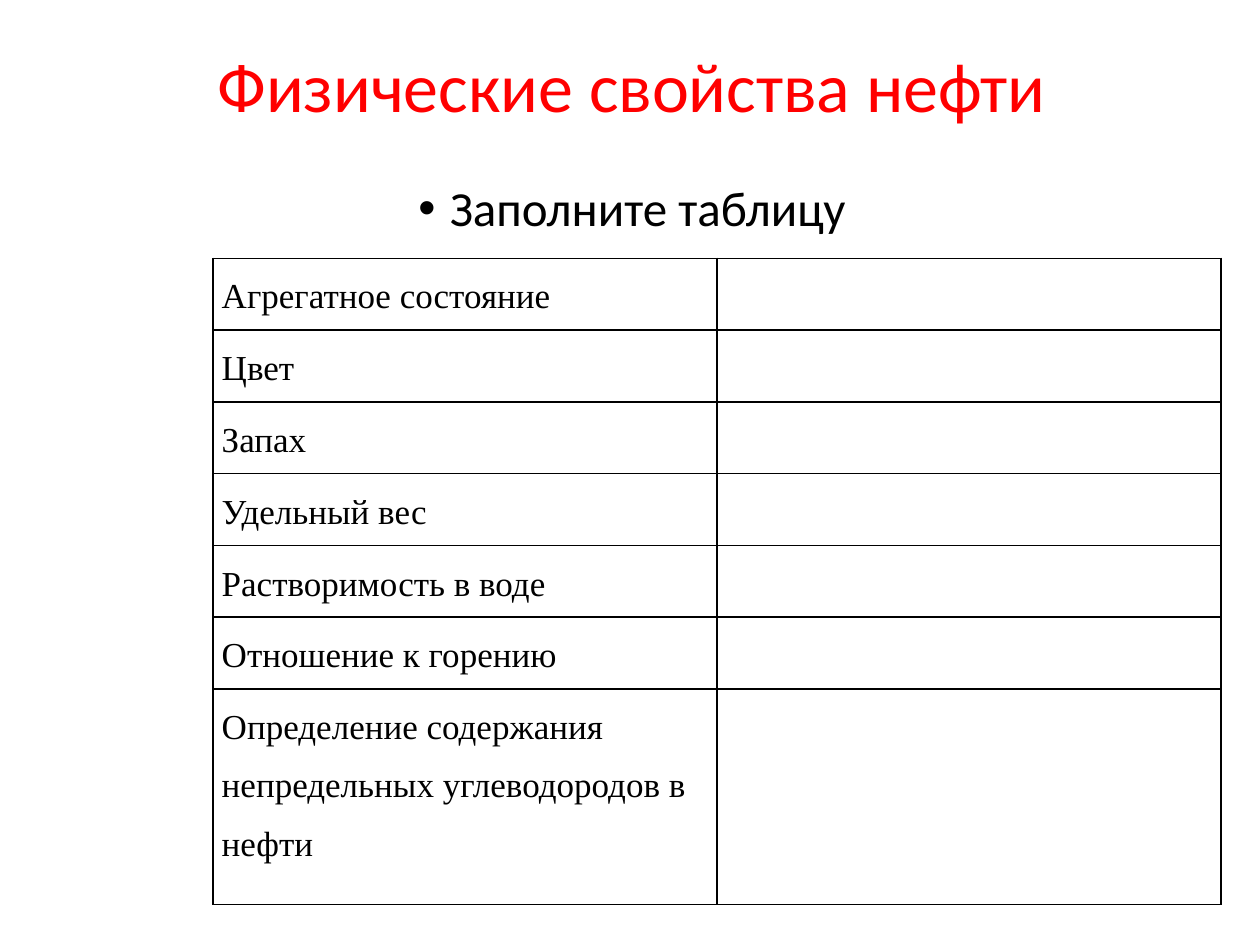
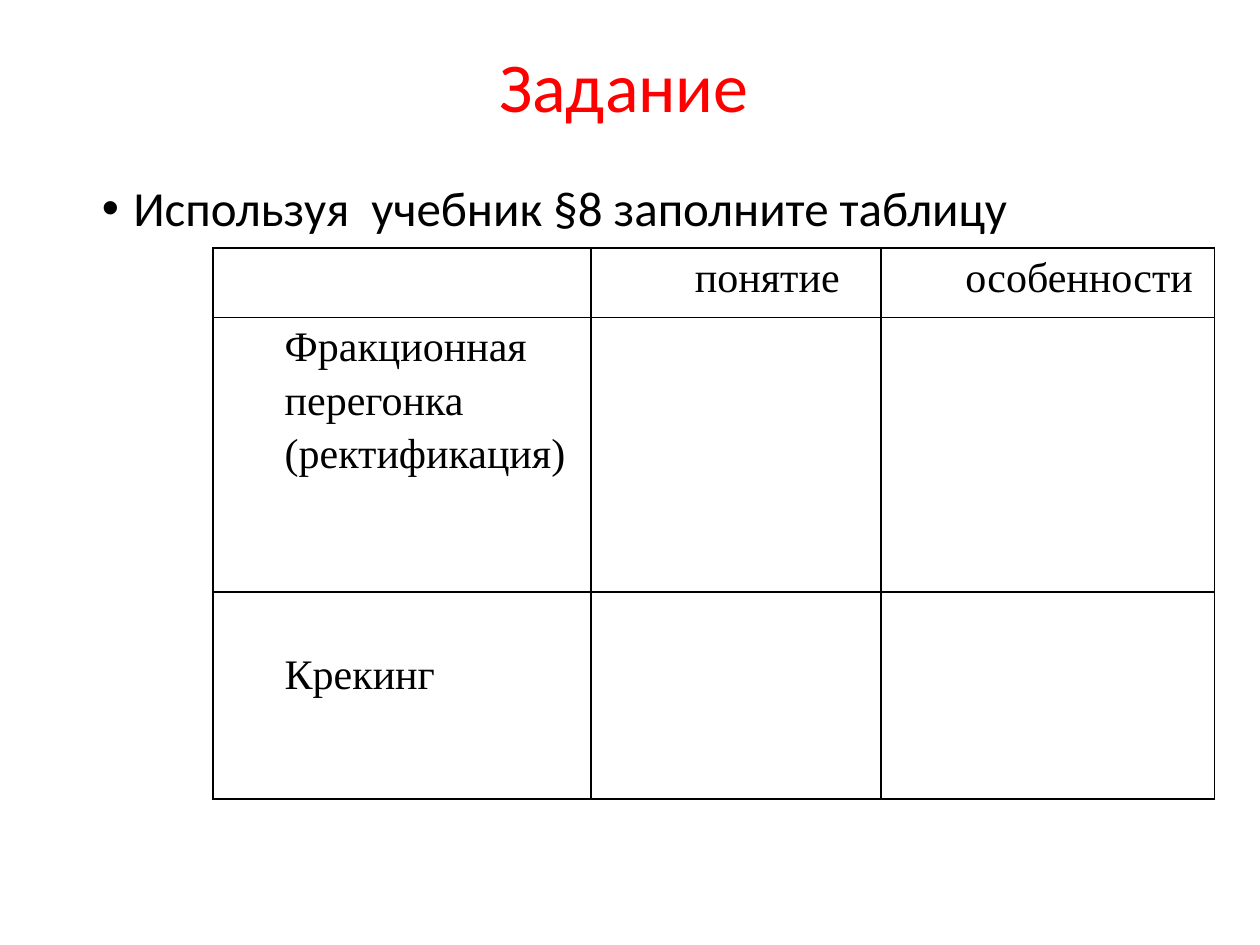
from lxml import etree
from pptx import Presentation, util as u
from pptx.dml.color import RGBColor
from pptx.enum import text as t
from pptx.oxml import ns

RED = RGBColor(0xFF, 0x00, 0x00)
BLACK = RGBColor(0x00, 0x00, 0x00)
SANS, SERIF = "Calibri", "Times New Roman"
COLS, ROWS = 100, 75
MID = t.PP_ALIGN.CENTER
LEFT = t.PP_ALIGN.LEFT


def write(frame, words, size=28, font=SANS, color=BLACK, align=LEFT,
          line=0.9, indent=0, bullet=None):
    """Fill a text frame, one paragraph for each line of words."""
    frame.word_wrap = True
    for i, part in enumerate(words.split("\n")):
        para = frame.add_paragraph() if i else frame.paragraphs[0]
        para.alignment, para.line_spacing = align, line
        para.space_before = u.Pt(0)
        props = para._p.get_or_add_pPr()
        props.set("marL", str(u.Inches(indent)))
        props.set("indent", str(u.Inches(-indent if bullet else 0)))
        if bullet:
            etree.SubElement(props, ns.qn("a:buFont"), typeface="Arial")
            etree.SubElement(props, ns.qn("a:buChar"), char=bullet)
        run = para.add_run()
        run.text = part
        run.font.size, run.font.name = u.Pt(size), font
        run.font.color.rgb = color


def border(cell, width=1):
    props = cell._tc.get_or_add_tcPr()
    for side in ("lnL", "lnR", "lnT", "lnB"):
        edge = etree.SubElement(props, ns.qn("a:" + side), w=str(u.Pt(width)))
        fill = etree.SubElement(edge, ns.qn("a:solidFill"))
        etree.SubElement(fill, ns.qn("a:srgbClr"), val=str(BLACK))


class Deck:
    """Hold the shared style and the current slide."""

    def __init__(self):
        self.prs = Presentation()
        self.prs.slide_width, self.prs.slide_height = u.Inches(10), u.Inches(7.5)
        self.slide = None

    def x(self, cols):
        return round(self.prs.slide_width * cols / COLS)

    def y(self, rows):
        return round(self.prs.slide_height * rows / ROWS)

    def box(self, left, top, wide, high):
        return self.x(left), self.y(top), self.x(wide), self.y(high)

    def title(self, words):
        """Start a slide with a red title."""
        self.slide = self.prs.slides.add_slide(self.prs.slide_layouts[5])
        head = self.slide.shapes.title
        head.left, head.top, head.width, head.height = self.box(7.1, 1.7, 86.1, 10.9)
        head.text_frame.vertical_anchor = t.MSO_ANCHOR.MIDDLE
        write(head.text_frame, words, size=40, color=RED, align=MID)

    def task(self, words, align=LEFT):
        area = self.slide.shapes.add_textbox(*self.box(7.1, 14.1, 86.1, 53.5))
        write(area.text_frame, words, align=align, indent=0.25, bullet="•")

    def table(self, top, wides, highs, cells, drops=(), **style):
        """Draw a ruled table; drops maps a cell to its top margin in rows."""
        drops = dict(drops)
        place = self.box(16.9, top, sum(wides), sum(highs))
        grid = self.slide.shapes.add_table(len(highs), len(wides), *place).table
        grid.first_row = grid.horz_banding = False
        for col, wide in zip(grid.columns, wides):
            col.width = self.x(wide)
        for row, high in zip(grid.rows, highs):
            row.height = self.y(high)
        for r, line in enumerate(cells):
            for c, words in enumerate(line):
                cell = grid.cell(r, c)
                border(cell)
                cell.fill.background()
                cell.margin_left = cell.margin_right = self.x(0.7)
                cell.margin_top = self.y(drops.get((r, c), 0))
                cell.margin_bottom = 0
                if words:
                    align = MID if c else LEFT
                    write(cell.text_frame, words, font=SERIF, align=align, **style)


def main():
    deck = Deck()

    deck.title("Физические свойства нефти")
    deck.task("Заполните таблицу", align=MID)
    traits = ["Агрегатное состояние", "Цвет", "Запах", "Удельный вес",
              "Растворимость в воде", "Отношение к горению",
              "Определение содержания непредельных углеводородов в нефти"]
    deck.table(20.5, [40, 40], [5.7] * 6 + [17.1],
               [(trait, "") for trait in traits], size=20, line=1.5)

    deck.title("Задание ")
    deck.task("Используя  учебник §8 заполните таблицу")
    deck.table(19.7, [30, 23, 26.5], [5.5, 21.8, 16.4],
               [("", "понятие", "особенности"),
                ("Фракционная перегонка\n(ректификация)", "", ""),
                ("Крекинг", "", "")],
               drops={(2, 0): 4.2}, size=24, line=1.15, indent=0.5)

    deck.prs.save("out.pptx")


if __name__ == "__main__":
    main()
